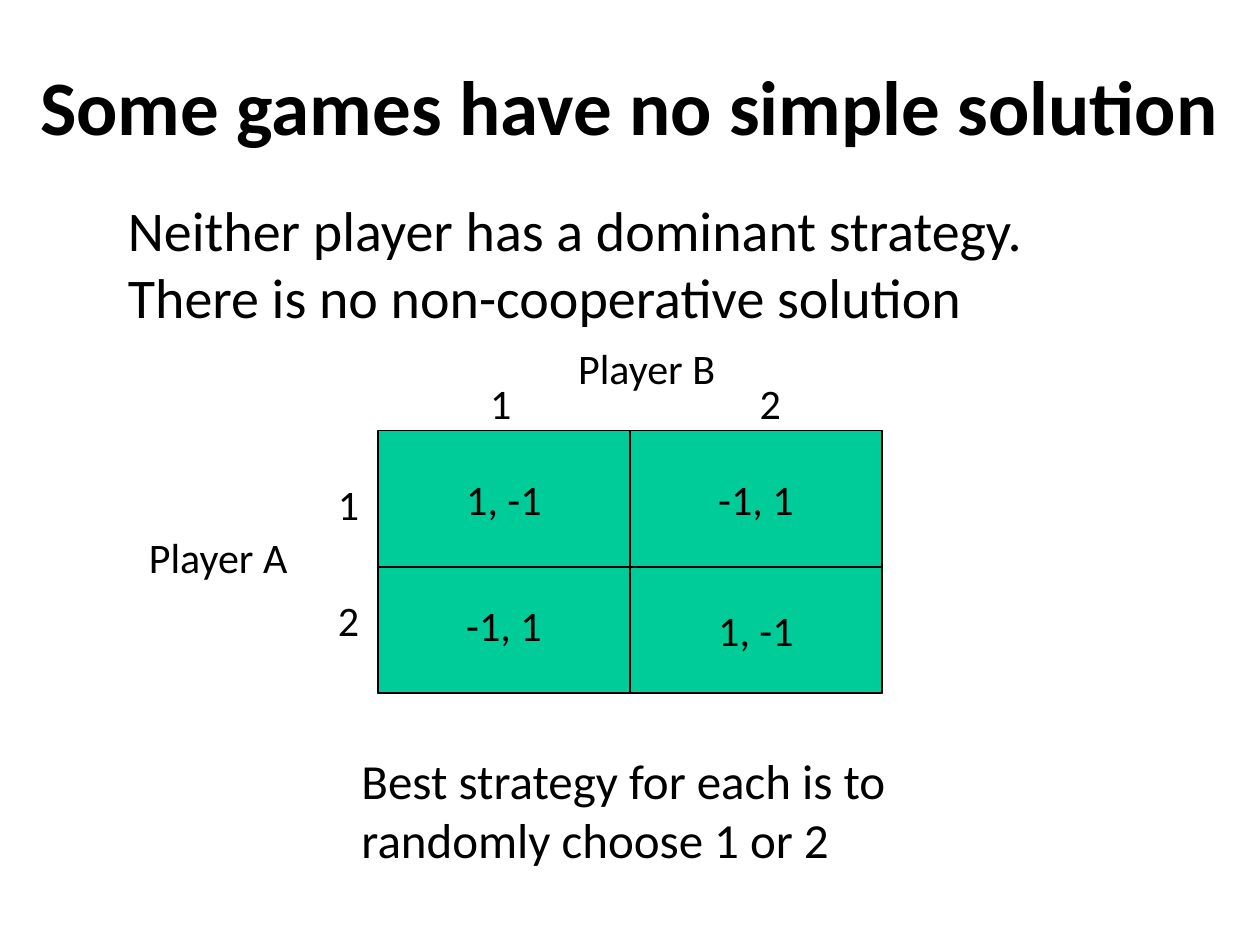
from pptx import Presentation
from pptx.dml.color import RGBColor
from pptx.enum.shapes import MSO_SHAPE
from pptx.enum.text import MSO_ANCHOR, MSO_AUTO_SIZE, PP_ALIGN
from pptx.util import Pt

RECTANGLE = MSO_SHAPE.RECTANGLE
TOP, MIDDLE = MSO_ANCHOR.TOP, MSO_ANCHOR.MIDDLE
LEFT, CENTER = PP_ALIGN.LEFT, PP_ALIGN.CENTER
FIT_SHAPE = MSO_AUTO_SIZE.SHAPE_TO_FIT_TEXT


class Theme:
    font = "Calibri"
    ink = RGBColor(0, 0, 0)
    payoff_fill = RGBColor(0x00, 0xCC, 0x99)
    line_width = 0.75
    title_size, body_size, advice_size, matrix_size = 44, 32, 28, 24


# Text, (left, top, width, height), format
STATEMENTS = [
    ("Some games have no simple solution", (0, 30, 720, 60),
     dict(size=Theme.title_size, bold=True, align=CENTER, anchor=MIDDLE)),
    ("Neither player has a dominant strategy.  There is no non-cooperative solution",
     (66, 108, 612, 90), dict(size=Theme.body_size, space_before=6.4)),
    ("Best strategy for each is to randomly choose 1 or 2",
     (199.5, 425.5, 321, 90), dict(size=Theme.advice_size, space_before=5.6)),
]

MATRIX = (216, 246, 288, 150)
COLUMN_WIDTH = MATRIX[2] / 2
# Payoff, column, top, height; the lower left cell reaches up behind the one above
PAYOFFS = [
    ("-1, 1", 0, 318, 78),
    ("1, -1", 0, 246, 78),
    ("-1, 1", 1, 246, 78),
    ("1, -1", 1, 324, 72),
]

PLAYER_LABELS = [("Player A", (78, 300, 94.3, 36)), ("Player B", (323.3, 192, 93.6, 36))]
ROW_CHOICES = [("1", 270), ("2", 336)]
COLUMN_CHOICES = [("1", 273), ("2", 427)]
ROW_CHOICE_LEFT, COLUMN_CHOICE_TOP = 186, 212
CHOICE_SIZE = (26.6, 36)


def write(shape, text, *, size=Theme.matrix_size, bold=False, align=LEFT,
          anchor=TOP, wrap=True, space_before=0):
    frame = shape.text_frame
    frame.word_wrap = wrap
    frame.vertical_anchor = anchor
    paragraph = frame.paragraphs[0]
    paragraph.alignment = align
    paragraph.space_before = Pt(space_before)
    run = paragraph.add_run()
    run.text = text
    run.font.name = Theme.font
    run.font.size = Pt(size)
    run.font.bold = bold
    run.font.color.rgb = Theme.ink


def add_text(slide, text, box, **text_format):
    textbox = slide.shapes.add_textbox(*map(Pt, box))
    write(textbox, text, **text_format)
    return textbox


def add_label(slide, text, box):
    label = add_text(slide, text, box, wrap=False)
    label.text_frame.auto_size = FIT_SHAPE


def add_panel(slide, box):
    panel = slide.shapes.add_shape(RECTANGLE, *map(Pt, box))
    panel.shadow.inherit = False
    panel.fill.solid()
    panel.fill.fore_color.rgb = Theme.payoff_fill
    panel.line.color.rgb = Theme.ink
    panel.line.width = Pt(Theme.line_width)
    return panel


def main():
    deck = Presentation()
    deck.slide_width, deck.slide_height = Pt(720), Pt(540)
    slide = deck.slides.add_slide(deck.slide_layouts[6])

    for text, box, text_format in STATEMENTS:
        add_text(slide, text, box, **text_format)

    add_panel(slide, MATRIX)
    for payoff, column, top, height in PAYOFFS:
        left = MATRIX[0] + column * COLUMN_WIDTH
        cell = add_panel(slide, (left, top, COLUMN_WIDTH, height))
        write(cell, payoff, align=CENTER, anchor=MIDDLE, wrap=False)

    for player, box in PLAYER_LABELS:
        add_label(slide, player, box)
    for choice, top in ROW_CHOICES:
        add_label(slide, choice, (ROW_CHOICE_LEFT, top, *CHOICE_SIZE))
    for choice, left in COLUMN_CHOICES:
        add_label(slide, choice, (left, COLUMN_CHOICE_TOP, *CHOICE_SIZE))

    deck.save("out.pptx")


if __name__ == "__main__":
    main()
